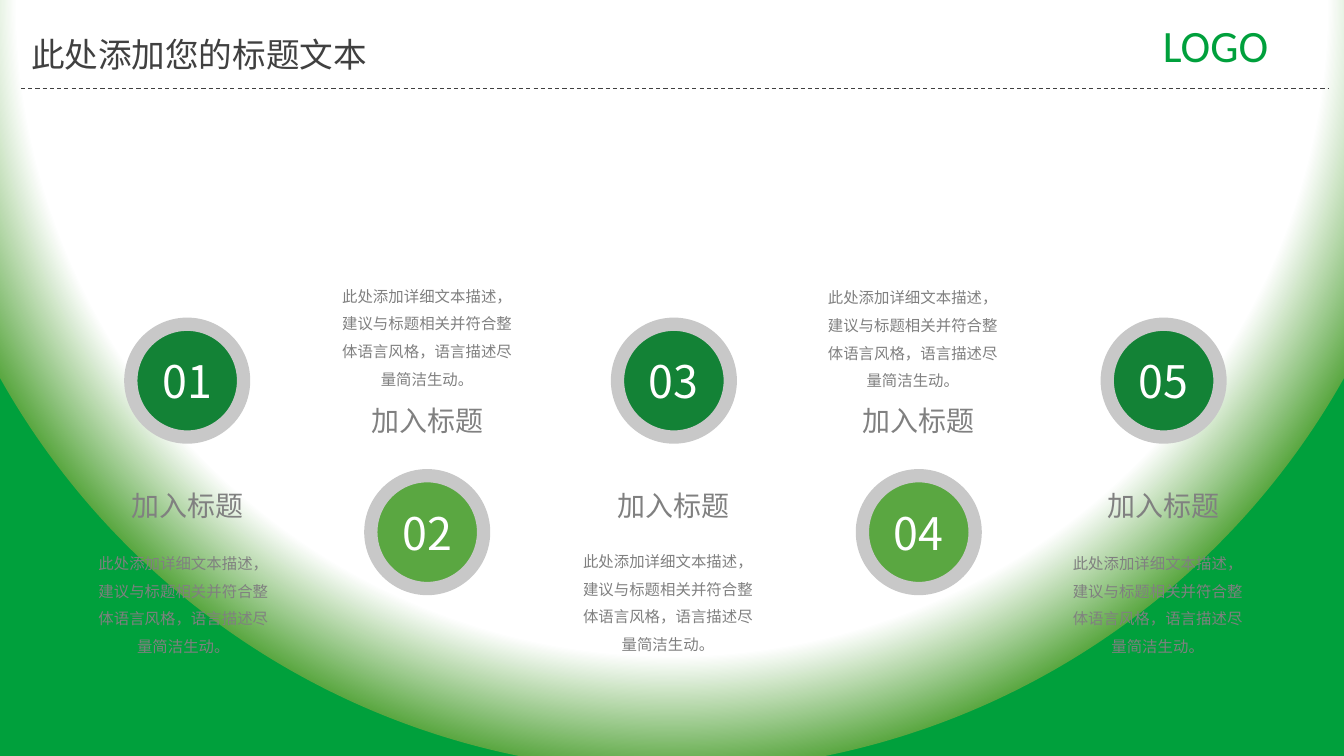
"""Build a five-step slide with numbered discs over a green radial background."""
from dataclasses import dataclass

from lxml import etree
from pptx import Presentation
from pptx.dml.color import RGBColor
from pptx.enum import dml, shapes, text
from pptx.oxml import parse_xml
from pptx.oxml.ns import nsdecls, qn
from pptx.util import Pt


@dataclass(frozen=True)
class Theme:
    cjk: str = "Noto Sans CJK SC"
    latin: str = "Calibri"
    white: str = "FFFFFF"
    green: str = "00A03C"
    dark_green: str = "138236"
    light_green: str = "5AA741"
    ring: str = "C8C8C8"
    ink: str = "404040"
    gray: str = "808080"
    display: int = 32
    title: int = 24
    heading: int = 20
    body: int = 11


T = Theme()
HEADING = "加入标题"
BODY = "此处添加详细文本描述，建议与标题相关并符合整体语言风格，语言描述尽量简洁生动。"
DISC, HEADING_W, BODY_W = 80.6, 95, 136
STEPS = [
    (133.8, 131.1, 385.2),
    (305.3, 305.3, 194.2),
    (481.6, 477.4, 383.8),
    (656.6, 652.4, 195.3),
    (831.6, 827.4, 385.2),
]


def paint_background(s):
    """Give the slide a radial gradient centred above its top edge."""
    stops = [(0, T.white), (85, T.white), (100, T.light_green), (100, T.green)]
    gs = "".join(f'<a:gs pos="{pos * 1000}"><a:srgbClr val="{color}"/></a:gs>'
                 for pos, color in stops)
    bg = parse_xml(
        f'<p:bg {nsdecls("p", "a")}><p:bgPr><a:gradFill><a:gsLst>{gs}</a:gsLst>'
        '<a:path path="circle"><a:fillToRect l="50000" t="-80000" r="50000" b="180000"/>'
        '</a:path></a:gradFill><a:effectLst/></p:bgPr></p:bg>')
    s._element.cSld.insert(0, bg)


def write(tf, words, size, color, font=T.cjk, align=text.PP_ALIGN.CENTER, spacing=None):
    """Put one styled paragraph into a text frame."""
    p = tf.paragraphs[0]
    p.text = words
    p.alignment = align
    if spacing:
        p.line_spacing = spacing
    p.font.size = Pt(size)
    p.font.name = font
    p.font.color.rgb = RGBColor.from_string(color)
    ea = etree.SubElement(p._p.pPr.find(qn("a:defRPr")), qn("a:ea"))
    ea.set("typeface", font)


def add_text(parent, box, words, size, color, wrap=True,
             anchor=text.MSO_ANCHOR.TOP, **style):
    """Add a text box that grows with its text."""
    tf = parent.add_textbox(*map(Pt, box)).text_frame
    tf.word_wrap = wrap
    tf.auto_size = text.MSO_AUTO_SIZE.SHAPE_TO_FIT_TEXT
    tf.vertical_anchor = anchor
    write(tf, words, size, color, **style)


def add_disc(parent, center, top, number, color):
    """Add a ringed disc holding a step number."""
    sp = parent.add_shape(shapes.MSO_SHAPE.OVAL, Pt(center - DISC / 2), Pt(top),
                          Pt(DISC), Pt(DISC))
    sp.shadow.inherit = False
    sp.fill.solid()
    sp.fill.fore_color.rgb = RGBColor.from_string(color)
    sp.line.color.rgb = RGBColor.from_string(T.ring)
    sp.line.width = Pt(9.5)
    sp.text_frame.vertical_anchor = text.MSO_ANCHOR.MIDDLE
    write(sp.text_frame, f"{number:02d}", T.display, T.white)


def add_step(s, number, center, body_center, body_top):
    """Group a disc with its heading and description."""
    upper = number % 2 == 1
    disc_top, heading_top = (231.6, 345.6) if upper else (339.8, 285)
    color = T.dark_green if upper else T.light_green
    parent = s.shapes.add_group_shape().shapes
    add_disc(parent, center, disc_top, number, color)
    add_text(parent, (center - HEADING_W / 2, heading_top, HEADING_W, 31.5),
             HEADING, T.heading, T.gray, wrap=False)
    add_text(parent, (body_center - BODY_W / 2, body_top, BODY_W, 87.1),
             BODY, T.body, T.gray, anchor=text.MSO_ANCHOR.MIDDLE, spacing=1.5)


def add_rule(s):
    """Draw the dashed line under the title."""
    line = s.shapes.add_connector(shapes.MSO_CONNECTOR.STRAIGHT,
                                  Pt(15), Pt(63.3), Pt(949.7), Pt(63.3))
    line.line.color.rgb = RGBColor.from_string(T.ink)
    line.line.width = Pt(0.75)
    line.line.dash_style = dml.MSO_LINE.DASH
    etree.SubElement(line._element.spPr, qn("a:effectLst"))


def main():
    """Assemble and save the slide."""
    prs = Presentation()
    prs.slide_width, prs.slide_height = Pt(960.48), Pt(540)
    s = prs.slides.add_slide(prs.slide_layouts[6])
    paint_background(s)
    add_rule(s)
    add_text(s.shapes, (803.5, 9.4, 130.3, 46), "LOGO", T.display, T.green, font=T.latin)
    for number, step in enumerate(STEPS, 1):
        add_step(s, number, *step)
    add_text(s.shapes, (15.1, 20.9, 351.4, 36), "此处添加您的标题文本",
             T.title, T.ink, align=text.PP_ALIGN.LEFT)
    prs.save("out.pptx")


if __name__ == "__main__":
    main()
